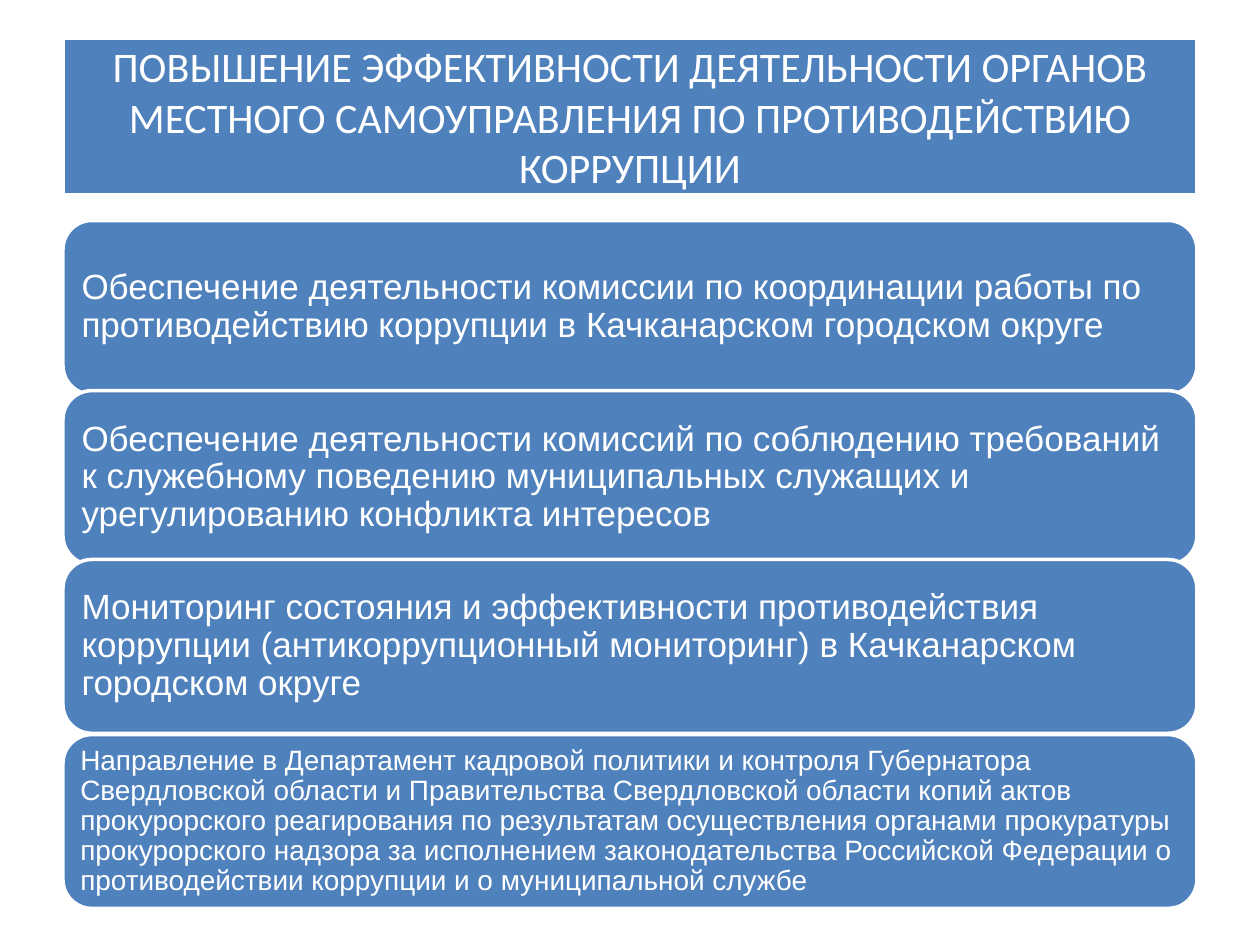
import dataclasses

import pptx
import pptx.dml.color
import pptx.enum.shapes
import pptx.enum.text
import pptx.util

Inches = pptx.util.Inches
Pt = pptx.util.Pt

COLORS = {"panel": "4F81BD", "white": "FFFFFF"}
LEFT, WIDTH = 0.5, 9
MEASURE_HEIGHT = 1.38


@dataclasses.dataclass
class Measure:
    text: str
    top: float
    font_size: int = 20
    inset: float = 0.08


MEASURES = [
    Measure("Обеспечение деятельности комиссии по координации работы по противодействию коррупции "
            "в Качканарском городском округе", 1.75),
    Measure("Обеспечение деятельности комиссий по соблюдению требований к служебному поведению "
            "муниципальных служащих и урегулированию конфликта интересов", 3.1),
    Measure("Мониторинг состояния и эффективности противодействия коррупции "
            "(антикоррупционный мониторинг) в Качканарском городском округе", 4.44),
    Measure("Направление в Департамент кадровой политики и контроля Губернатора Свердловской области "
            "и Правительства Свердловской области копий актов прокурорского реагирования по результатам "
            "осуществления органами прокуратуры прокурорского надзора за исполнением законодательства "
            "Российской Федерации о противодействии коррупции и о муниципальной службе", 5.83, 16, 0.07),
]


def color(name: str) -> pptx.dml.color.RGBColor:
    return pptx.dml.color.RGBColor.from_string(COLORS[name])


def style_panel(shape, text: str, font_name: str, font_size: int, inset: float,
                alignment: pptx.enum.text.PP_ALIGN, line_spacing: float) -> None:
    shape.fill.solid()
    shape.fill.fore_color.rgb = color("panel")
    shape.line.color.rgb = color("white")
    shape.line.width = Pt(2)
    frame = shape.text_frame
    frame.text = text
    frame.word_wrap = True
    frame.auto_size = pptx.enum.text.MSO_AUTO_SIZE.NONE
    frame.vertical_anchor = pptx.enum.text.MSO_ANCHOR.MIDDLE
    frame.margin_left = frame.margin_right = Inches(inset)
    frame.margin_top = frame.margin_bottom = Inches(inset)
    paragraph = frame.paragraphs[0]
    paragraph.alignment = alignment
    paragraph.line_spacing = line_spacing
    font = paragraph.runs[0].font
    font.name = font_name
    font.size = Pt(font_size)
    font.color.rgb = color("white")


def format_title(title) -> None:
    title.left, title.top = Inches(LEFT), Inches(0.3)
    title.width, title.height = Inches(WIDTH), Inches(1.25)
    style_panel(title, "ПОВЫШЕНИЕ ЭФФЕКТИВНОСТИ ДЕЯТЕЛЬНОСТИ ОРГАНОВ МЕСТНОГО САМОУПРАВЛЕНИЯ "
                "ПО ПРОТИВОДЕЙСТВИЮ КОРРУПЦИИ", "Calibri", 24, 0,
                pptx.enum.text.PP_ALIGN.CENTER, 1.0)


def add_measure(slide, measure: Measure) -> None:
    shape = slide.shapes.add_shape(
        pptx.enum.shapes.MSO_SHAPE.ROUNDED_RECTANGLE,
        Inches(LEFT), Inches(measure.top), Inches(WIDTH), Inches(MEASURE_HEIGHT))
    shape.shadow.inherit = False
    style_panel(shape, measure.text, "Arial", measure.font_size, measure.inset,
                pptx.enum.text.PP_ALIGN.LEFT, 0.9)


def main() -> None:
    presentation = pptx.Presentation()
    presentation.slide_width, presentation.slide_height = Inches(10), Inches(7.5)
    slide = presentation.slides.add_slide(presentation.slide_layouts[5])
    format_title(slide.shapes.title)
    for measure in MEASURES:
        add_measure(slide, measure)
    presentation.save("out.pptx")


if __name__ == "__main__":
    main()
